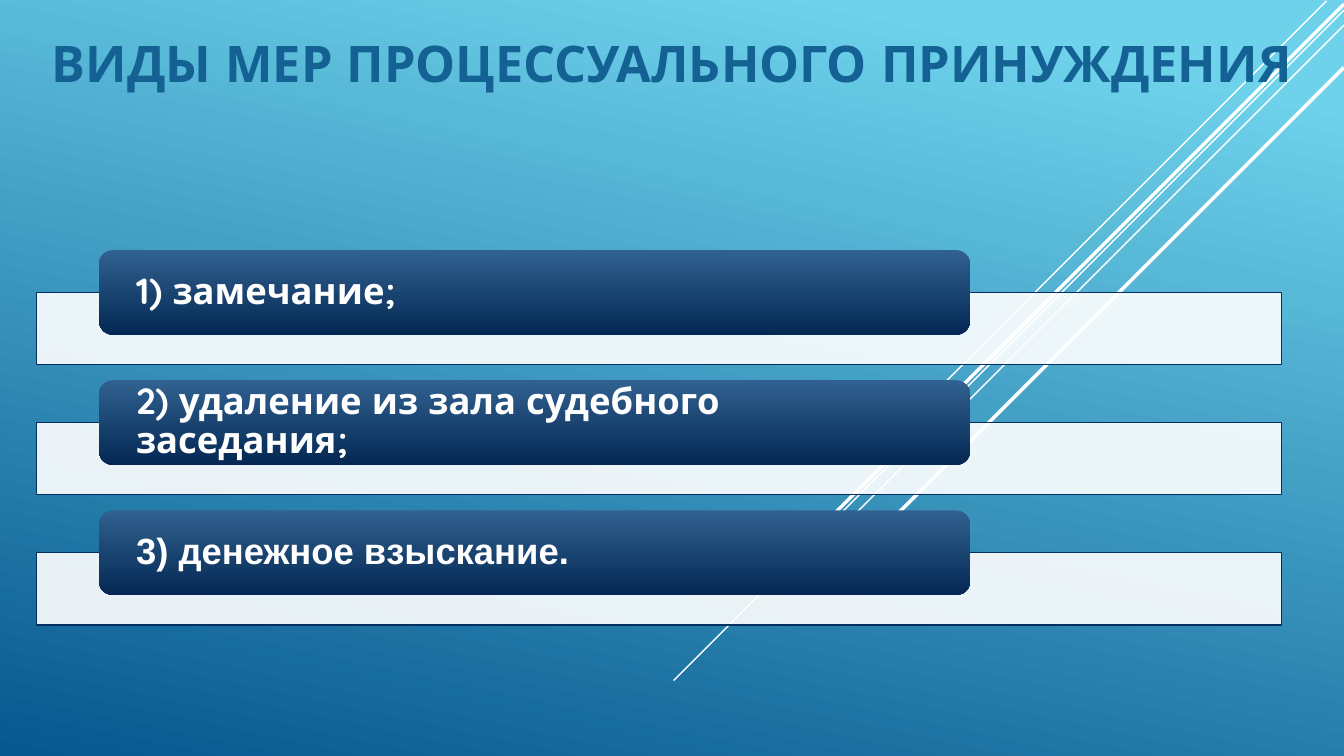
from lxml.etree import SubElement
from pptx import Presentation
from pptx.dml.color import RGBColor
from pptx.enum.shapes import MSO_CONNECTOR as Connector, MSO_SHAPE as Shape
from pptx.enum.text import MSO_ANCHOR as Anchor, PP_ALIGN as Align
from pptx.oxml.ns import qn
from pptx.util import Pt


def color(hex_text):
    return RGBColor.from_string(hex_text)


def set_gradient(fill, angle, stops):
    """Fill with two (position, colour) stops; the angle runs clockwise."""
    fill.gradient()
    fill.gradient_angle = 360 - angle
    for stop, (position, hex_text) in zip(fill.gradient_stops, stops):
        stop.position = position
        stop.color.rgb = color(hex_text)


presentation = Presentation()
presentation.slide_width = Pt(960)
presentation.slide_height = Pt(540)
slide = presentation.slides.add_slide(presentation.slide_layouts[6])
set_gradient(slide.background.fill, 102, [(0.1, "6ED2EB"), (1, "06588E")])

# Diagonal rays at 45 degrees: start x, start y, reach, width
rays = [
    (947.5, 0.7, 299.8, 1),
    (960, 7.2, 478.8, 1),
    (960, 18, 390.3, 1),
    (960, 2.9, 382, 2.5),
    (960, 48.2, 342, 2.5),
]
for x, y, reach, width in rays:
    ray = slide.shapes.add_connector(
        Connector.STRAIGHT, Pt(x), Pt(y), Pt(x - reach), Pt(y + reach))
    ray.line.color.rgb = color("FFFFFF")
    ray.line.width = Pt(width)
    SubElement(ray._element.spPr, qn("a:effectLst"))

# Title
title = slide.shapes.add_textbox(Pt(0), Pt(3.6), Pt(960), Pt(81.4))
title.text_frame.word_wrap = True
title.text_frame.vertical_anchor = Anchor.MIDDLE
paragraph = title.text_frame.paragraphs[0]
paragraph.alignment = Align.CENTER
run = paragraph.add_run()
run.text = "ВИДЫ МЕР ПРОЦЕССУАЛЬНОГО ПРИНУЖДЕНИЯ"
run.font.name = "Quicksand"
run.font.size = Pt(36)
run.font.bold = True
run.font.color.rgb = color("146194")

# Each measure is a label over a translucent bar
measures = [
    ("1) замечание;", "Quicksand"),
    ("2) удаление из зала судебного заседания;", "Quicksand"),
    ("3) денежное взыскание.", "Arial"),
]
for index, (text, font_name) in enumerate(measures):
    top = 178.6 + 93 * index

    bar = slide.shapes.add_shape(
        Shape.RECTANGLE, Pt(26.4), Pt(top + 30.3), Pt(889.2), Pt(51.6))
    bar.shadow.inherit = False
    bar.fill.solid()
    bar.fill.fore_color.rgb = color("FFFFFF")
    bar_color = bar._element.spPr.find(qn("a:solidFill"))[0]
    SubElement(bar_color, qn("a:alpha"), val="90000")
    bar.line.color.rgb = color("052F61")
    bar.line.width = Pt(0.75)

    label = slide.shapes.add_shape(
        Shape.ROUNDED_RECTANGLE, Pt(70.6), Pt(top), Pt(622.4), Pt(60.4))
    label.shadow.inherit = False
    set_gradient(label.fill, 90, [(0, "316190"), (1, "042853")])
    label.line.fill.background()

    frame = label.text_frame
    frame.word_wrap = True
    frame.vertical_anchor = Anchor.MIDDLE
    frame.margin_left = frame.margin_right = Pt(23.6)
    frame.margin_top = frame.margin_bottom = Pt(0)
    paragraph = frame.paragraphs[0]
    paragraph.alignment = Align.LEFT
    paragraph.line_spacing = 0.9
    run = paragraph.add_run()
    run.text = text
    run.font.name = font_name
    run.font.size = Pt(26)
    run.font.bold = True
    run.font.color.rgb = color("FFFFFF")

presentation.save("out.pptx")
